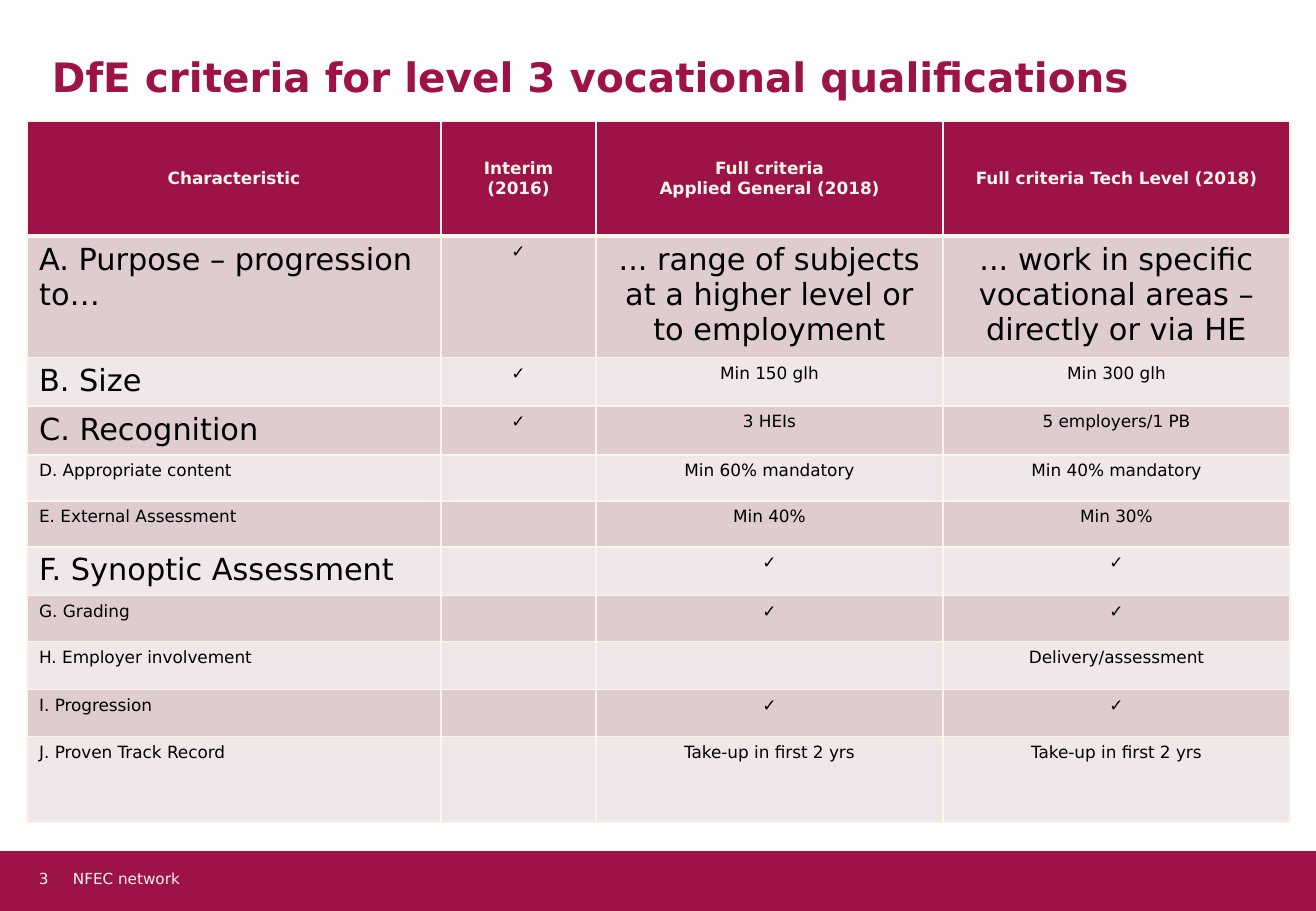
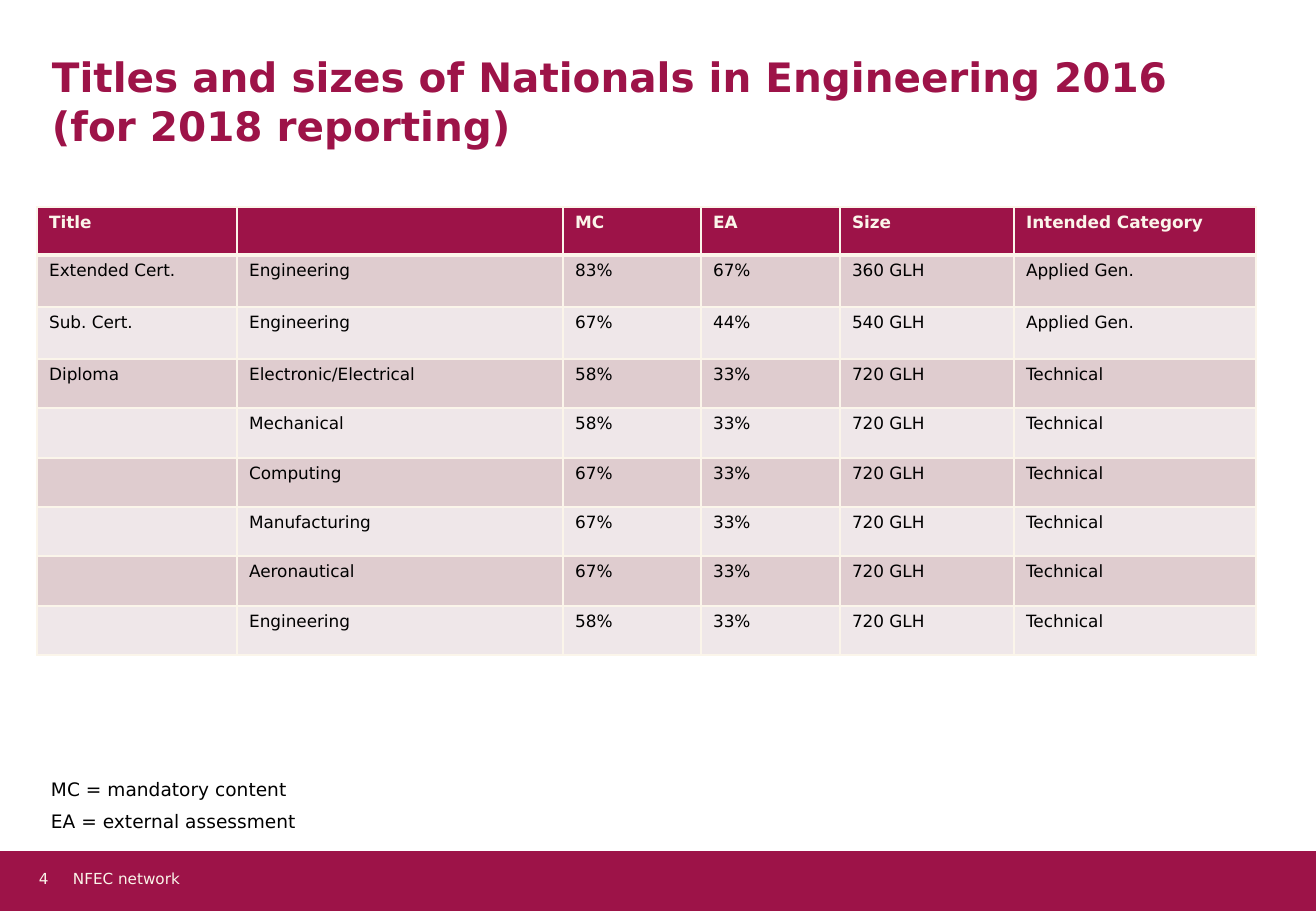
from lxml.etree import SubElement as Sub
from pptx import Presentation
from pptx.dml.color import RGBColor as Rgb
from pptx.enum.shapes import MSO_CONNECTOR as Link, MSO_SHAPE as Kind
from pptx.enum.text import MSO_ANCHOR as Anchor, PP_ALIGN as Align
from pptx.oxml.ns import qn
from pptx.util import Pt

PX = 7526
WIDE, HIGH = 1316, 911
FONT = "DejaVu Sans"
HUE = {"brand": "9D1348", "cream": "FBF5EA", "dark": "DFCCCF",
       "light": "EFE7E9", "ink": "000000", "white": "FFFFFF"}

TICK = "✓"
RULES = [
    ["Characteristic", "Interim (2016)", "Full criteria\nApplied General (2018)",
     "Full criteria Tech Level (2018)"],
    ["A. Purpose – progression to…", TICK,
     "... range of subjects at a higher level or to employment",
     "... work in specific vocational areas – directly or via HE"],
    ["B. Size", TICK, "Min 150 glh", "Min 300 glh"],
    ["C. Recognition", TICK, "3 HEIs", "5 employers/1 PB"],
    ["D. Appropriate content", "", "Min 60% mandatory", "Min 40% mandatory"],
    ["E. External Assessment", "", "Min 40%", "Min 30%"],
    ["F. Synoptic Assessment", "", TICK, TICK],
    ["G. Grading", "", TICK, TICK],
    ["H. Employer involvement", "", "", "Delivery/assessment"],
    ["I. Progression", "", TICK, TICK],
    ["J. Proven Track Record", "", "Take-up in first 2 yrs", "Take-up in first 2 yrs"],
]
LARGE = {(1, 0), (1, 2), (1, 3), (2, 0), (3, 0), (6, 0)}

AWARDS = [
    ["Title", "", "MC", "EA", "Size", "Intended Category"],
    ["Extended Cert.", "Engineering", "83%", "67%", "360 GLH", "Applied Gen."],
    ["Sub. Cert.", "Engineering", "67%", "44%", "540 GLH", "Applied Gen."],
    ["Diploma", "Electronic/Electrical", "58%", "33%", "720 GLH", "Technical"],
    ["", "Mechanical", "58%", "33%", "720 GLH", "Technical"],
    ["", "Computing", "67%", "33%", "720 GLH", "Technical"],
    ["", "Manufacturing", "67%", "33%", "720 GLH", "Technical"],
    ["", "Aeronautical", "67%", "33%", "720 GLH", "Technical"],
    ["", "Engineering", "58%", "33%", "720 GLH", "Technical"],
]


def scale(*marks):
    """Turn px lengths into EMU."""
    return [mark * PX for mark in marks]


def tint(name):
    """Give the named colour."""
    return Rgb.from_string(HUE[name])


def style(frame, size, hue, bold=False, align=Align.LEFT, gap=0):
    """Format all text of a frame, with a gap between paragraphs."""
    for rank, para in enumerate(frame.paragraphs):
        para.alignment = align
        if rank and gap:
            para.space_before = Pt(gap)
        for run in para.runs:
            run.font.name = FONT
            run.font.size = Pt(size)
            run.font.bold = bold
            run.font.color.rgb = tint(hue)
        if not para.runs:
            para._p.get_or_add_endParaRPr().set("sz", str(size * 100))


def label(slide, box, text, size, hue, bold=False, inset=(0, 0), gap=0):
    """Place a wrapped text box."""
    frame = slide.shapes.add_textbox(*scale(*box)).text_frame
    frame.word_wrap = True
    frame.margin_left = frame.margin_right = inset[0] * PX
    frame.margin_top = frame.margin_bottom = inset[1] * PX
    frame.text = text
    style(frame, size, hue, bold, gap=gap)


def footer(slide, box, number):
    """Draw the bottom band with its number and name."""
    left, top, width, height = box
    band = slide.shapes.add_shape(Kind.RECTANGLE, *scale(*box))
    band.shadow.inherit = False
    band.fill.solid()
    band.fill.fore_color.rgb = tint("brand")
    band.line.fill.background()
    rule = slide.shapes.add_connector(
        Link.STRAIGHT, *scale(left, top, left + width, top))
    rule.line.color.rgb = tint("white")
    rule.line.width = Pt(0.5)
    Sub(rule._element.spPr, qn("a:effectLst"))
    label(slide, (left + 73, top + 19, 717, 24), "NFEC network", 9, "cream")
    label(slide, (left + 39, top + 19, 34, 24), str(number), 9, "cream")


def edge(cell, **sides):
    """Draw cell borders, given as points for each side."""
    props = cell._tc.get_or_add_tcPr()
    for side, width in sides.items():
        line = Sub(props, qn(f"a:ln{side}"), w=str(Pt(width)))
        Sub(Sub(line, qn("a:solidFill")), qn("a:srgbClr"), val=HUE["cream"])


def grid(slide, spot, cols, rows, data, large=(), centre=(), anchor=Anchor.TOP):
    """Place a banded table with a strong header row."""
    box = scale(*spot, sum(cols), sum(rows))
    table = slide.shapes.add_table(len(rows), len(cols), *box).table
    table.horz_banding = False
    for col, width in zip(table.columns, cols):
        col.width = width * PX
    for y, (row, height) in enumerate(zip(table.rows, rows)):
        row.height = height * PX
        head = y == 0
        back = "brand" if head else "dark" if y % 2 else "light"
        for x, cell in enumerate(row.cells):
            edge(cell, L=1, R=1, T=3 if y == 1 else 1, B=3 if head else 1)
            cell.fill.solid()
            cell.fill.fore_color.rgb = tint(back)
            cell.vertical_anchor = anchor if head else Anchor.TOP
            cell.text_frame.text = data[y][x]
            mid = x in centre or (head and centre)
            style(cell.text_frame, 18 if (y, x) in large else 10,
                  "cream" if head else "ink", head,
                  Align.CENTER if mid else Align.LEFT)


def page(deck, title, lines, number):
    """Add a slide with the shared title and footer."""
    slide = deck.slides.add_slide(deck.slide_layouts[6])
    footer(slide, (0, 850, WIDE, HIGH - 850), number)
    label(slide, (52, 52, 1209, 59 * lines), title, 24, "brand", True)
    return slide


def main():
    """Build and save both slides."""
    deck = Presentation()
    deck.slide_width, deck.slide_height = scale(WIDE, HIGH)

    slide = page(deck, "DfE criteria for level 3 vocational qualifications", 1, 3)
    grid(slide, (27, 121), [414, 155, 347, 347],
         [115, 118, 47, 48, 46, 46, 47, 46, 48, 47, 86], RULES,
         LARGE, {1, 2, 3}, Anchor.MIDDLE)

    slide = page(deck, "Titles and sizes of Nationals in Engineering 2016 "
                 "(for 2018 reporting)", 2, 4)
    grid(slide, (37, 207), [200, 326, 138, 139, 174, 242],
         [48, 52, 52] + [49, 50, 49] * 2, AWARDS)
    label(slide, (39, 772, 275, 68),
          "MC = mandatory content\nEA = external assessment",
          11, "ink", inset=(12, 6), gap=6)
    deck.save("out.pptx")


if __name__ == "__main__":
    main()
